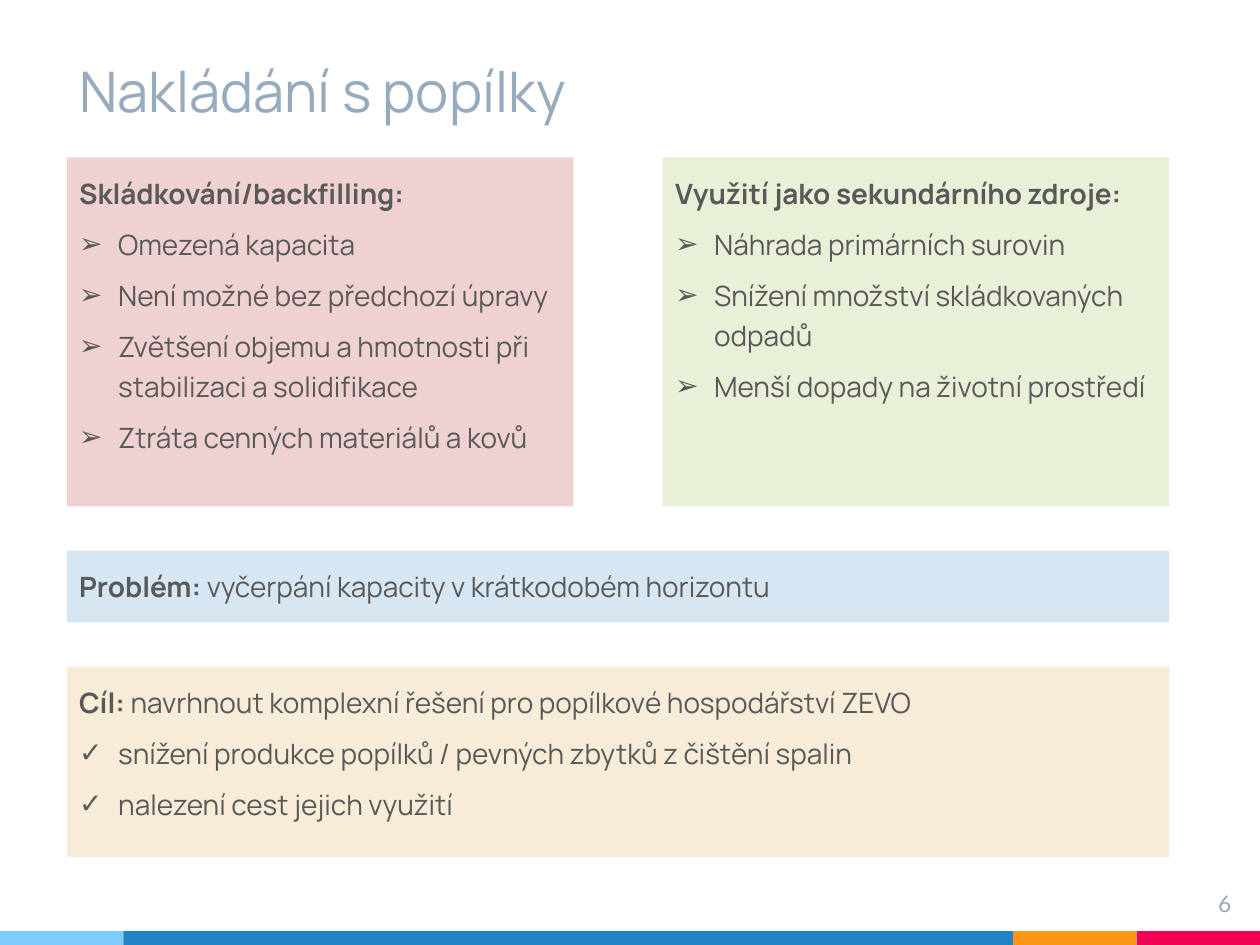
from lxml.etree import SubElement
from pptx import Presentation
from pptx.dml.color import RGBColor
from pptx.enum.shapes import MSO_SHAPE as Shape
from pptx.enum.text import MSO_ANCHOR as Anchor, PP_ALIGN as Align
from pptx.oxml.ns import qn
from pptx.util import Inches, Pt

TEXT, MUTED = "595959", "97ABBC"
LEFT, WIDTH, COLUMN = 0.53, 8.75, 4.02


def color(value):
    """Turn a hex string into a colour."""
    return RGBColor.from_string(value)


def add_span(para, text, size=16, bold=False, font="Manrope", tint=TEXT):
    """Append one formatted run to a paragraph."""
    span = para.add_run()
    span.text = text
    span.font.size, span.font.name, span.font.bold = Pt(size), font, bold
    span.font.color.rgb = color(tint)


def set_bullet(para, mark):
    """Give a paragraph a hanging bullet."""
    props = para._p.get_or_add_pPr()
    props.set("marL", str(Inches(0.31)))
    props.set("indent", str(-Inches(0.31)))
    tint = SubElement(props, qn("a:buClr"))
    SubElement(tint, qn("a:srgbClr"), val=TEXT)
    SubElement(props, qn("a:buFont"), typeface="Arial")
    SubElement(props, qn("a:buChar"), char=mark)


def set_frame(shape, anchor=Anchor.TOP):
    """Apply the common insets and wrapping, and return the text frame."""
    frame = shape.text_frame
    frame.word_wrap = True
    frame.vertical_anchor = anchor
    frame.margin_left = frame.margin_right = Inches(0.1)
    frame.margin_top = frame.margin_bottom = Inches(0.1)
    return frame


def add_block(page, box, fill):
    """Draw a plain filled rectangle."""
    block = page.shapes.add_shape(Shape.RECTANGLE, *map(Inches, box))
    block.shadow.inherit = False
    block.fill.solid()
    block.fill.fore_color.rgb = color(fill)
    block.line.fill.background()
    return block


def add_label(page, box, text, size, font, anchor=Anchor.TOP, align=Align.LEFT):
    """Place one muted line of text."""
    label = page.shapes.add_textbox(*map(Inches, box))
    para = set_frame(label, anchor).paragraphs[0]
    para.alignment = align
    add_span(para, text, size, font=font, tint=MUTED)


def add_panel(page, box, fill, heading, lead="", mark="", items=()):
    """Fill a coloured panel with a heading line and bulleted items."""
    frame = set_frame(add_block(page, box, fill))
    for index, item in enumerate([lead, *items]):
        para = frame.add_paragraph() if index else frame.paragraphs[0]
        para.alignment = Align.LEFT
        para.line_spacing, para.space_after = 1.2, Pt(6)
        if index:
            set_bullet(para, mark)
        else:
            add_span(para, heading, bold=True)
        if item:
            add_span(para, item)


def add_footer(page, box):
    """Draw the coloured strip along the bottom edge."""
    left, top, width, height = box
    end = 0.98
    middle = width - 3 * end
    for part, fill in ((end, "7ECEFD"), (middle, "2185C5"), (end, "FF9715"), (end, "F20253")):
        add_block(page, (left, top, part, height), fill)
        left += part


def main():
    """Build the slide and save it."""
    deck = Presentation()
    deck.slide_width, deck.slide_height = Inches(10), Inches(7.5)
    page = deck.slides.add_slide(deck.slide_layouts[6])
    add_footer(page, (0, 7.39, 10, 0.11))
    add_label(page, (LEFT, 0.31, 8.96, 0.77), "Nakládání s popílky", 32, "Manrope", Anchor.BOTTOM)
    add_label(page, (9.27, 6.96, 0.6, 0.46), "6", 13, "Lato", align=Align.RIGHT)
    add_panel(page, (LEFT, 1.25, COLUMN, 2.77), "EFD1D1", "Skládkování/backfilling:", mark="➢", items=(
        "Omezená kapacita",
        "Není možné bez předchozí úpravy",
        "Zvětšení objemu a hmotnosti při stabilizaci a solidifikace",
        "Ztráta cenných materiálů a kovů",
    ))
    right = LEFT + WIDTH - COLUMN
    add_panel(page, (right, 1.25, COLUMN, 2.77), "E8F0D8", "Využití jako sekundárního zdroje:", mark="➢", items=(
        "Náhrada primárních surovin",
        "Snížení množství skládkovaných odpadů",
        "Menší dopady na životní prostředí",
    ))
    add_panel(page, (LEFT, 4.37, WIDTH, 0.57), "D6E6F2", "Problém: ",
              "vyčerpání kapacity v krátkodobém horizontu")
    add_panel(page, (LEFT, 5.29, WIDTH, 1.51), "F7ECD7", "Cíl: ",
              "navrhnout komplexní řešení pro popílkové hospodářství ZEVO", "✓", (
                  "snížení produkce popílků / pevných zbytků z čištění spalin",
                  "nalezení cest jejich využití",
              ))
    deck.save("out.pptx")


if __name__ == "__main__":
    main()
